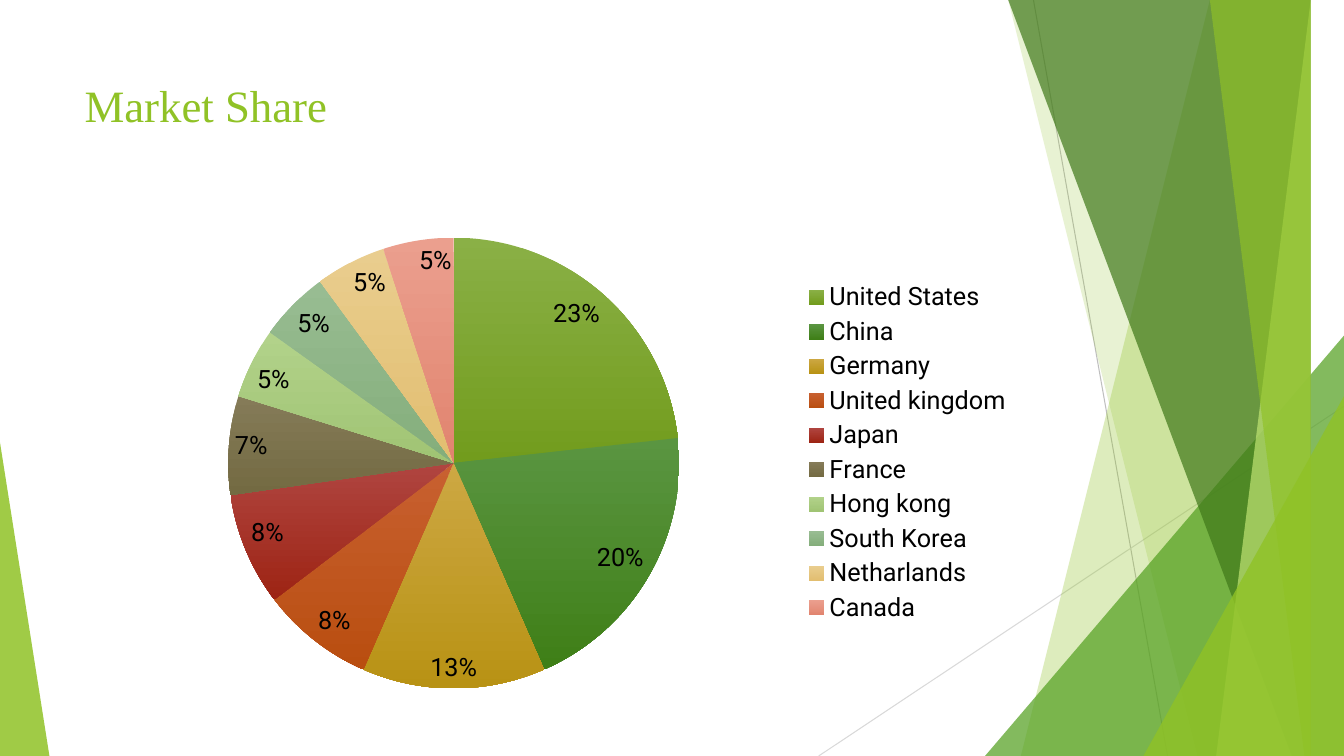
import pptx
import pptx.chart.data
import pptx.dml.color
import pptx.enum.chart
import pptx.enum.shapes
import pptx.util
from lxml import etree
from pptx.oxml.ns import qn
from pptx.util import Inches

WIDTH, HEIGHT = 13.33, 7.5

LINES = [
    ((10.25, 0), (11.58, HEIGHT), "BFBFBF"),
    ((WIDTH, 4.03), (8.12, HEIGHT), "D9D9D9"),
]
BACK_BANDS = [(12.28, 10.04, "90C226", 30), (10.5, 11.83, "90C226", 20)]
FRONT_BANDS = [
    (10.21, 12.91, "3F7819", 70),
    (13.03, 11.92, "C0E474", 70),
    (11.96, 13.18, "90C226", 65),
]
MARKET_SHARES = [
    ("United States", 23, "8AB046", "729C1D"),
    ("China", 20, "5A9541", "3F7F17"),
    ("Germany", 13, "CDA843", "B89214"),
    ("United kingdom", 8, "C86030", "B94E10"),
    ("Japan", 8, "B04540", "9D2414"),
    ("France", 7, "857B58", "736A42"),
    ("Hong kong", 5, "B2D28A", "A0C474"),
    ("South Korea", 5, "98BC92", "84AE7B"),
    ("Netharlands", 5, "E9CD8E", "E2BE70"),
    ("Canada", 5, "EB9F8E", "E1846F"),
]


def color(value):
    return pptx.dml.color.RGBColor.from_string(value)


class SlideBuilder:
    title_font = "Times New Roman"
    chart_font = "Roboto"
    accent = "90C226"

    def __init__(self, slide):
        self.slide = slide
        self.shapes = slide.shapes

    def line(self, start, end, stroke):
        connector = self.shapes.add_connector(
            pptx.enum.shapes.MSO_CONNECTOR.STRAIGHT,
            *(Inches(value) for value in (*start, *end)),
        )
        connector.line.color.rgb = color(stroke)
        connector.line.width = pptx.util.Pt(0.75)
        etree.SubElement(connector._element.spPr, qn("a:effectLst"))

    def paint(self, shape, fill, opacity):
        shape.shadow.inherit = False
        shape.fill.solid()
        shape.fill.fore_color.rgb = color(fill)
        shape.line.fill.background()
        solid = shape._element.spPr.find(qn("a:solidFill"))
        alpha = etree.SubElement(solid[0], qn("a:alpha"))
        alpha.set("val", str(opacity * 1000))

    def band(self, top_left, bottom_left, fill, opacity):
        builder = self.shapes.build_freeform(top_left, 0, scale=Inches(1))
        builder.add_line_segments(
            [(WIDTH, 0), (WIDTH, HEIGHT), (bottom_left, HEIGHT)], close=True
        )
        self.paint(builder.convert_to_shape(), fill, opacity)

    def triangle(self, left, top, right, apex, fill, opacity):
        shape = self.shapes.add_shape(
            pptx.enum.shapes.MSO_SHAPE.ISOSCELES_TRIANGLE,
            Inches(left), Inches(top), Inches(right - left), Inches(HEIGHT - top),
        )
        shape.adjustments[0] = apex
        self.paint(shape, fill, opacity)

    def title(self, text, left, top, width, height):
        box = self.shapes.add_textbox(
            Inches(left), Inches(top), Inches(width), Inches(height)
        )
        frame = box.text_frame
        frame.word_wrap = True
        frame.margin_top = Inches(0.1)
        frame.text = text
        font = frame.paragraphs[0].runs[0].font
        font.name = self.title_font
        font.size = pptx.util.Pt(32)
        font.color.rgb = color(self.accent)

    def pie(self, shares, left, top, width, height, plot_box):
        data = pptx.chart.data.CategoryChartData()
        data.categories = [share[0] for share in shares]
        data.add_series("Series 1", [share[1] for share in shares])
        chart = self.shapes.add_chart(
            pptx.enum.chart.XL_CHART_TYPE.PIE,
            Inches(left), Inches(top), Inches(width), Inches(height), data,
        ).chart
        chart.has_title = False
        chart.font.name = self.chart_font
        chart.font.size = pptx.util.Pt(18)
        chart.font.color.rgb = color("000000")
        chart.has_legend = True
        chart.legend.position = pptx.enum.chart.XL_LEGEND_POSITION.RIGHT
        chart.legend.include_in_layout = False

        plot = chart.plots[0]
        plot.vary_by_categories = True
        plot.has_data_labels = True
        labels = plot.data_labels
        labels.show_value = False
        labels.show_percentage = True
        labels.number_format = "0%"
        labels.number_format_is_linked = False
        labels.position = pptx.enum.chart.XL_LABEL_POSITION.INSIDE_END

        for index, (_, _, light, dark) in enumerate(shares):
            point = plot.series[0].points[index]
            fill = point.format.fill
            fill.gradient()
            fill.gradient_angle = 270
            for stop, shade in zip(fill.gradient_stops, (light, dark)):
                stop.color.rgb = color(shade)
            point.format.line.fill.background()
        self.place_plot(chart, plot_box)

    def place_plot(self, chart, plot_box):
        plot_area = chart._chartSpace.chart.plotArea
        layout = plot_area.find(qn("c:layout"))
        if layout is None:
            layout = etree.Element(qn("c:layout"))
            plot_area.insert(0, layout)
        manual = etree.SubElement(layout, qn("c:manualLayout"))
        settings = [("layoutTarget", "inner"), ("xMode", "edge"), ("yMode", "edge")]
        settings += zip("xywh", plot_box)
        for name, value in settings:
            etree.SubElement(manual, qn(f"c:{name}")).set("val", str(value))


def main():
    presentation = pptx.Presentation()
    presentation.slide_width = Inches(WIDTH)
    presentation.slide_height = Inches(HEIGHT)
    builder = SlideBuilder(
        presentation.slides.add_slide(presentation.slide_layouts[6])
    )
    for line in LINES:
        builder.line(*line)
    for band in BACK_BANDS:
        builder.band(*band)
    builder.triangle(9.77, 3.33, WIDTH, 1, "54A021", 72)
    for band in FRONT_BANDS:
        builder.band(*band)
    builder.triangle(11.34, 3.93, WIDTH, 1, builder.accent, 80)
    builder.triangle(0, 4.39, 0.49, 0, builder.accent, 85)
    builder.title("Market Share", 0.74, 0.67, 9.4, 0.8)
    builder.pie(MARKET_SHARES, 0.74, 1.89, 9.4, 5.2, (0.16, 0.09, 0.48, 0.86))
    presentation.save("out.pptx")


if __name__ == "__main__":
    main()
